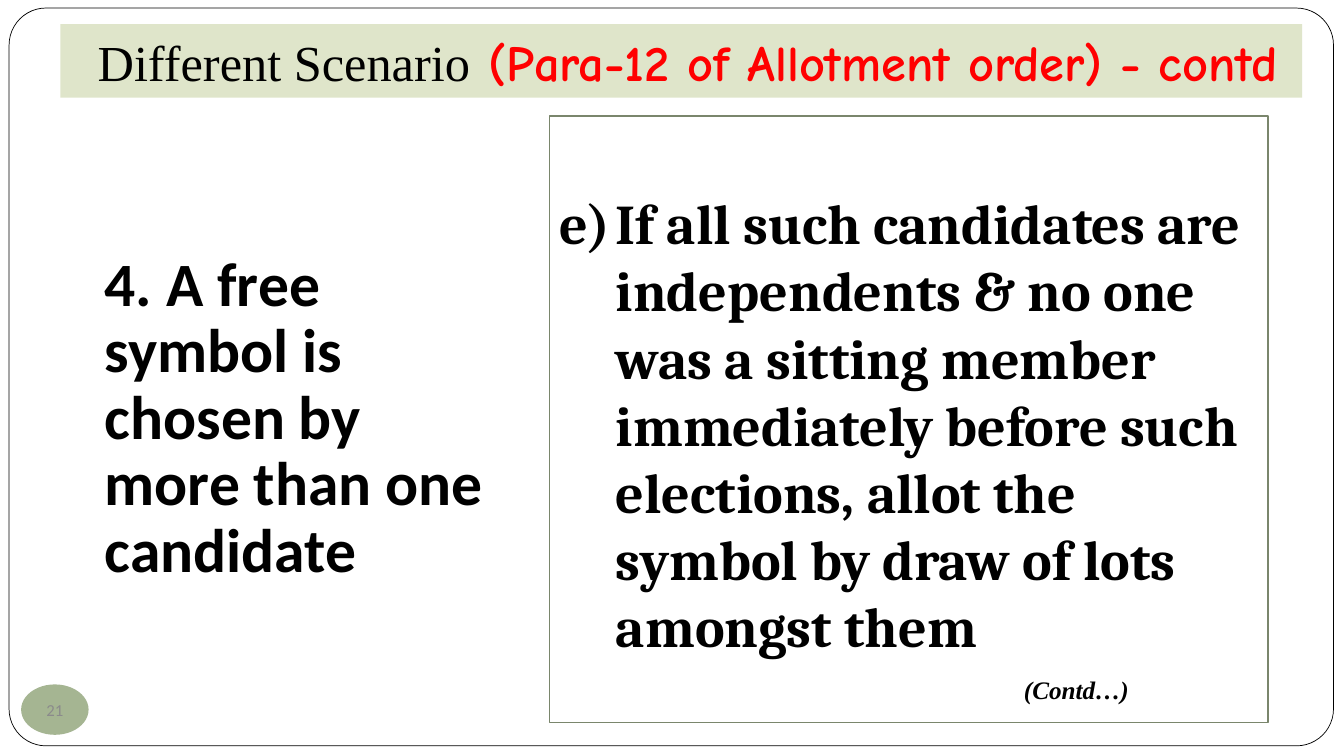
from lxml.etree import SubElement
from pptx import Presentation
from pptx.dml.color import RGBColor
from pptx.enum.shapes import MSO_SHAPE as Shape
from pptx.enum.text import MSO_ANCHOR as Anchor, MSO_AUTO_SIZE as AutoSize, PP_ALIGN as Align
from pptx.oxml.ns import qn
from pptx.util import Pt

BLACK, WHITE, RED, GREY = "000000", "FFFFFF", "FF0000", "8B8B8B"
SAGE, PALE_SAGE, OLIVE = "A5B592", "DFE5CA", "7A866C"


def color(value):
    return RGBColor.from_string(value)


def format_run(run, font, size, hue=BLACK, bold=False, italic=False):
    run.font.name, run.font.size = font, Pt(size)
    run.font.bold, run.font.italic = bold, italic
    run.font.color.rgb = color(hue)


def add_panel(slide, kind, box, fill=None, line=None, line_width=1):
    shape = slide.shapes.add_shape(kind, *map(Pt, box))
    shape.shadow.inherit = False
    if fill:
        shape.fill.solid()
        shape.fill.fore_color.rgb = color(fill)
    else:
        shape.fill.background()
    if line:
        shape.line.color.rgb = color(line)
        shape.line.width = Pt(line_width)
    else:
        shape.line.fill.background()
    return shape


def add_frame(slide, box):
    frame = add_panel(slide, Shape.ROUNDED_RECTANGLE, box, WHITE, BLACK, 0.5)
    frame.adjustments[0] = 0.05
    # Send the frame behind the title
    slide.shapes.element.insert(2, frame.element)


def place_title(slide, box, lead, reference):
    title = slide.shapes.title
    title.left, title.top, title.width, title.height = map(Pt, box)
    title.fill.solid()
    title.fill.fore_color.rgb = color(PALE_SAGE)
    text_frame = title.text_frame
    text_frame.auto_size = AutoSize.NONE
    text_frame.vertical_anchor = Anchor.MIDDLE
    paragraph = text_frame.paragraphs[0]
    paragraph.alignment = Align.CENTER
    for text, font, hue, bold in (
        (lead, "Times New Roman", BLACK, False),
        (reference, "Comic Neue", RED, True),
    ):
        run = paragraph.add_run()
        run.text = text
        format_run(run, font, 36, hue, bold)


def add_scenario(slide, box, text):
    text_frame = slide.shapes.add_textbox(*map(Pt, box)).text_frame
    text_frame.word_wrap = True
    text_frame.vertical_anchor = Anchor.MIDDLE
    text_frame.text = text
    paragraph = text_frame.paragraphs[0]
    paragraph.line_spacing = 0.9
    paragraph.space_before = Pt(10)
    format_run(paragraph.runs[0], "Calibri", 44, bold=True)


def add_rule(slide, box, text, note):
    left, top, width, height = box
    text_frame = add_panel(slide, Shape.RECTANGLE, box, line=OLIVE).text_frame
    text_frame.vertical_anchor = Anchor.TOP
    text_frame.margin_top = Pt(52)
    text_frame.text = text
    paragraph = text_frame.paragraphs[0]
    paragraph.alignment = Align.LEFT
    format_run(paragraph.runs[0], "Cambria", 40, bold=True)
    # Lettered list that starts at e)
    properties = paragraph._p.get_or_add_pPr()
    indent = Pt(40.5)
    properties.set("marL", str(indent))
    properties.set("indent", str(-indent))
    SubElement(properties, qn("a:buFont"), typeface="Cambria")
    SubElement(properties, qn("a:buAutoNum"), type="alphaLcParenR", startAt="5")

    # Continuation note in the lower right corner
    note_box = (left + width - 181.5, top + height - 38, 90, 29)
    note_frame = slide.shapes.add_textbox(*map(Pt, note_box)).text_frame
    note_frame.word_wrap = False
    note_frame.text = note
    format_run(note_frame.paragraphs[0].runs[0], "Times New Roman", 18, bold=True, italic=True)


def add_page_number(slide, box, number):
    text_frame = add_panel(slide, Shape.OVAL, box, SAGE).text_frame
    text_frame.vertical_anchor = Anchor.MIDDLE
    text_frame.text = number
    paragraph = text_frame.paragraphs[0]
    paragraph.alignment = Align.CENTER
    format_run(paragraph.runs[0], "Calibri", 12, GREY)


def main():
    presentation = Presentation()
    presentation.slide_width, presentation.slide_height = Pt(960), Pt(540)
    slide = presentation.slides.add_slide(presentation.slide_layouts[5])
    add_frame(slide, (6.5, 5.75, 946, 527))
    place_title(slide, (43.2, 17.3, 887, 52.5),
                " Different Scenario", " (Para-12 of Allotment order) - contd")
    add_scenario(slide, (67.7, 82.8, 297.4, 433.4),
                 "4. A free symbol is chosen by more than one candidate")
    add_rule(slide, (392.4, 82.8, 513.4, 433.4),
             "If all such candidates are independents & no one was a sitting member "
             "immediately before such elections, allot the symbol by draw of lots amongst them",
             "(Contd…)")
    add_page_number(slide, (15.1, 488.9, 48.2, 36), "21")
    presentation.save("out.pptx")


if __name__ == "__main__":
    main()
